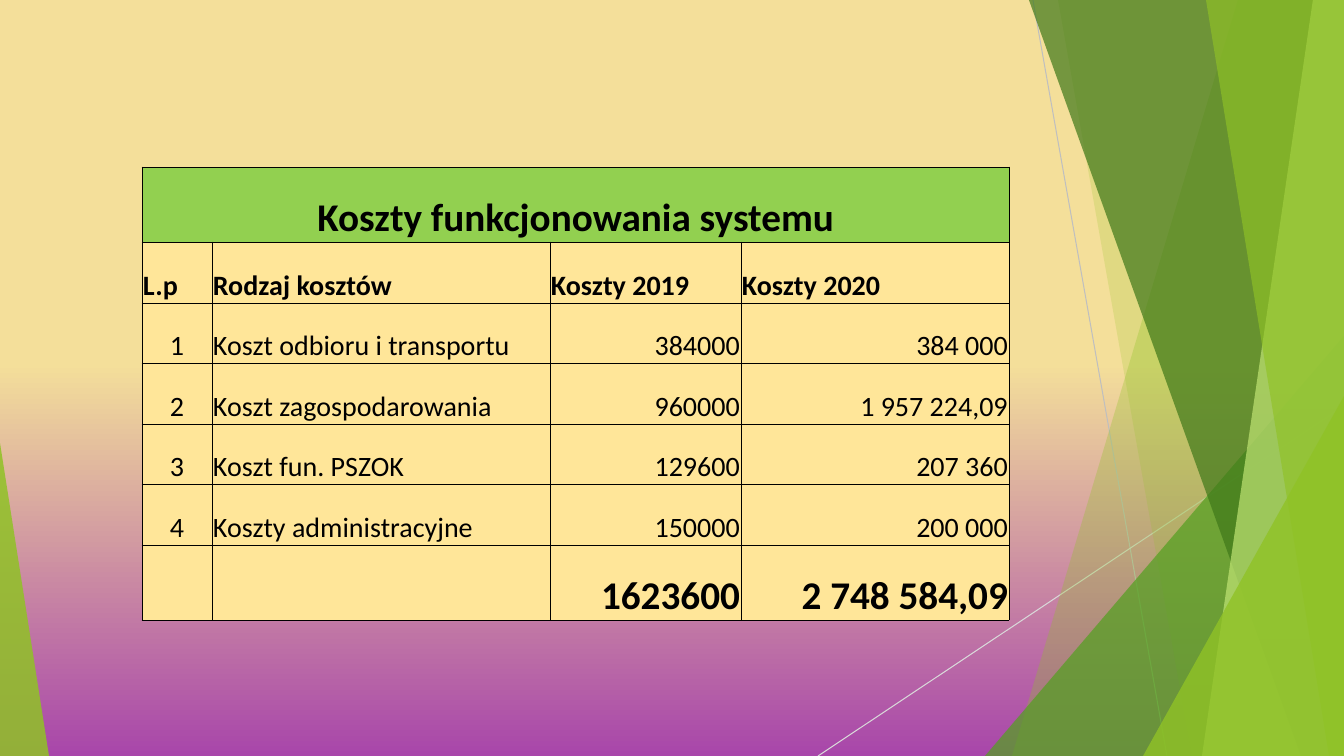
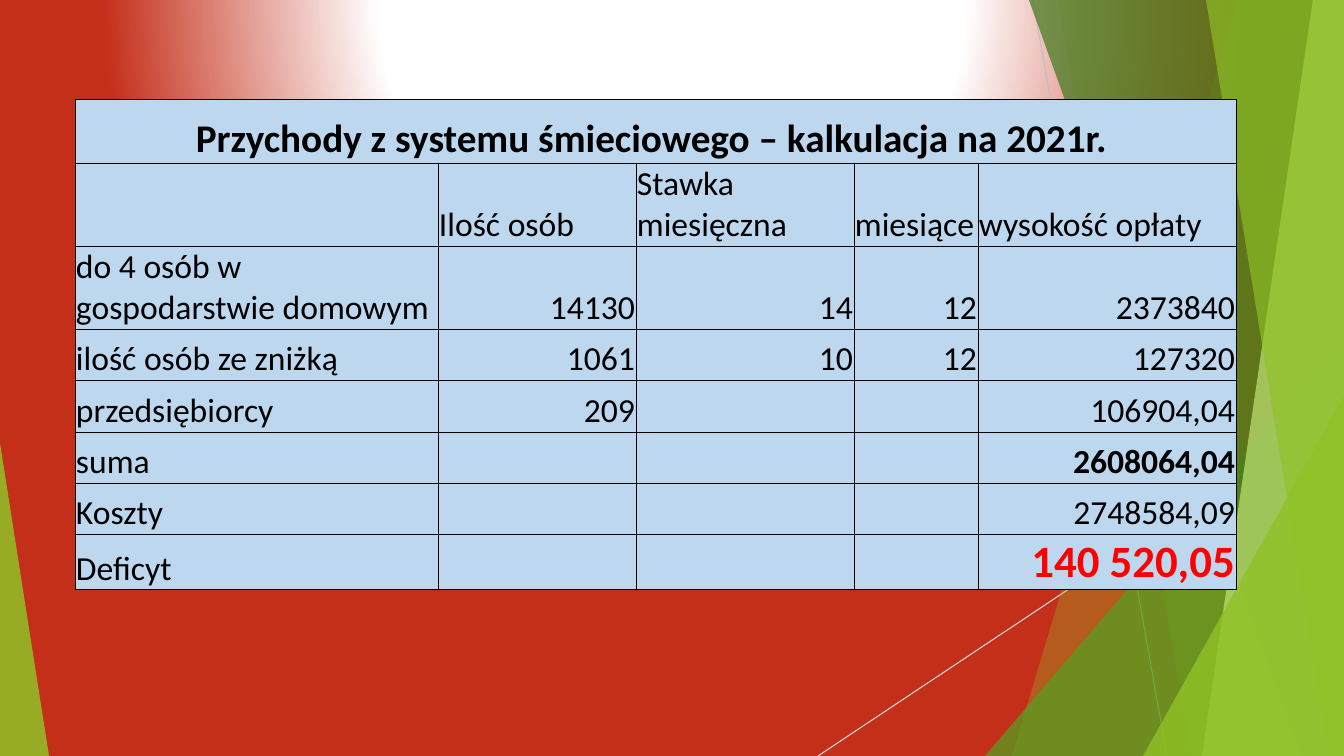
import pptx
import pptx.dml.color
import pptx.enum.shapes
import pptx.enum.text
import pptx.oxml
import pptx.oxml.ns
import pptx.util
from lxml import etree

RGB = pptx.dml.color.RGBColor
Pt = pptx.util.Pt
ALIGN = pptx.enum.text.PP_ALIGN
qn = pptx.oxml.ns.qn
NS = pptx.oxml.ns.nsdecls("a")

EMU_PER_PX = 914400 / 100.8
WIDTH, HEIGHT = 1344, 756
FONT = "Calibri"
ALIGNS = {"l": ALIGN.LEFT, "c": ALIGN.CENTER, "r": ALIGN.RIGHT}

BLACK = RGB(0, 0, 0)
RED = RGB(0xFF, 0, 0)
LIME = RGB(0x90, 0xC2, 0x26)
GREEN = RGB(0x54, 0xA0, 0x21)
DARK_GREEN = RGB(0x3F, 0x78, 0x19)
PALE_LIME = RGB(0xC0, 0xE4, 0x74)
TITLE_GREEN = RGB(0x92, 0xD0, 0x50)
CREAM = RGB(0xFF, 0xE6, 0x99)
SKY = RGB(0xBD, 0xD7, 0xEE)
SAND = RGB(0xF4, 0xDF, 0x9A)
PURPLE = RGB(0xA8, 0x46, 0xAA)
WHITE = RGB(0xFF, 0xFF, 0xFF)
BRICK = RGB(0xC4, 0x2F, 0x1A)
GREY = RGB(0xBF, 0xBF, 0xBF)
LIGHT_GREY = RGB(0xD9, 0xD9, 0xD9)

# x1, y1, x2, y2, colour
RAYS = [(1033, 0, 1167, HEIGHT, GREY), (WIDTH, 406, 818, HEIGHT, LIGHT_GREY)]
# band: left edge at top and at bottom; triangle: left, top, width, apex
FACETS = [
    ("band", (1238, 1012), LIME, 30),
    ("band", (1058, 1192), LIME, 20),
    ("triangle", (985, 336, 359, 1), GREEN, 72),
    ("band", (1029, 1301), DARK_GREEN, 70),
    ("band", (1313, 1202), PALE_LIME, 70),
    ("band", (1206, 1329), LIME, 65),
    ("triangle", (1143, 396, 201, 1), LIME, 80),
    ("triangle", (0, 443, 49, 0), LIME, 85),
]

SLIDES = [
    {
        "stops": [(14, SAND), (48, SAND), (100, PURPLE)],
        "direction": '<a:lin ang="5400000" scaled="0"/>',
        "at": (142, 167),
        "cols": [70, 338, 191, 268],
        "rows": [75, 61, 60, 61, 60, 61, 75],
        "title": "Koszty funkcjonowania systemu",
        "title_fill": TITLE_GREEN,
        "fill": CREAM,
        "size": 20,
        "header_bold": True,
        "aligns": "clrr",
        "emphasis": {(6, 2): (28, BLACK), (6, 3): (28, BLACK)},
        "cells": [
            ["L.p", "Rodzaj kosztów", "Koszty 2019", "Koszty 2020"],
            ["1", "Koszt odbioru i transportu", "384000", "384 000"],
            ["2", "Koszt zagospodarowania", "960000", "1 957 224,09"],
            ["3", "Koszt fun. PSZOK", "129600", "207 360"],
            ["4", "Koszty administracyjne", "150000", "200 000"],
            ["", "", "1623600", "2 748 584,09"],
        ],
    },
    {
        "stops": [(0, WHITE), (38, WHITE), (74, BRICK)],
        "direction": '<a:path path="circle"><a:fillToRect l="50000" '
                     't="-80000" r="50000" b="180000"/></a:path>',
        "at": (75, 99),
        "cols": [363, 198, 218, 124, 258],
        "rows": [64, 83, 83, 51, 52, 51, 51, 52],
        "title": "Przychody z systemu śmieciowego – kalkulacja na 2021r. ",
        "title_fill": SKY,
        "fill": SKY,
        "size": 24,
        "header_bold": False,
        "aligns": "lrrrr",
        "emphasis": {(5, 4): (24, BLACK), (7, 4): (32, RED)},
        "cells": [
            ["", "Ilość osób", "Stawka miesięczna", "miesiące", "wysokość opłaty"],
            ["do 4 osób w gospodarstwie domowym", "14130", "14", "12", "2373840"],
            ["ilość osób ze zniżką", "1061", "10", "12", "127320"],
            ["przedsiębiorcy", "209", "", "", "106904,04"],
            ["suma", "", "", "", "2608064,04"],
            ["Koszty", "", "", "", "2748584,09"],
            ["Deficyt", "", "", "", "140 520,05"],
        ],
    },
]


def px(n):
    return pptx.util.Emu(round(n * EMU_PER_PX))


def add_ray(s, x1, y1, x2, y2, color):
    ray = s.shapes.add_connector(pptx.enum.shapes.MSO_CONNECTOR.STRAIGHT,
                                 px(x1), px(y1), px(x2), px(y2))
    ray.line.color.rgb = color
    ray.line.width = Pt(0.75)
    etree.SubElement(ray.element.spPr, qn("a:effectLst"))
    return ray


def add_facet(s, kind, geometry, color, opacity):
    if kind == "band":
        top_x, bottom_x = geometry
        builder = s.shapes.build_freeform(px(top_x), 0)
        builder.add_line_segments([(px(WIDTH), 0), (px(WIDTH), px(HEIGHT)),
                                   (px(bottom_x), px(HEIGHT))])
        sp = builder.convert_to_shape()
    else:
        left, top, width, apex = geometry
        sp = s.shapes.add_shape(pptx.enum.shapes.MSO_SHAPE.ISOSCELES_TRIANGLE,
                                px(left), px(top), px(width), px(HEIGHT - top))
        sp.adjustments[0] = apex
    sp.shadow.inherit = False
    sp.line.fill.background()
    sp.fill.solid()
    sp.fill.fore_color.rgb = color
    rgb = sp.element.spPr.find(qn("a:solidFill"))[0]
    etree.SubElement(rgb, qn("a:alpha"), val=str(opacity * 1000))
    return sp


def decorate_layout(layout, s):
    """Draw the rays and facets on s, then move them to its layout."""
    drawn = [add_ray(s, *ray) for ray in RAYS]
    drawn += [add_facet(s, *facet) for facet in FACETS]
    for sp in drawn:
        layout.shapes.element.append(sp.element)


def set_background(s, stops, direction):
    gs = "".join(f'<a:gs pos="{pos * 1000}"><a:srgbClr val="{color}"/></a:gs>'
                 for pos, color in stops)
    s.background.fill.solid()
    bg = s.element.find(".//" + qn("p:bgPr"))
    bg.replace(bg[0], pptx.oxml.parse_xml(
        f'<a:gradFill {NS} rotWithShape="1"><a:gsLst>{gs}</a:gsLst>'
        f"{direction}</a:gradFill>"))


def style_cell(cell, fill):
    tc_pr = cell._tc.get_or_add_tcPr()
    for side in "LRTB":
        tc_pr.append(pptx.oxml.parse_xml(
            f'<a:ln{side} {NS} w="6350"><a:solidFill><a:srgbClr val="{BLACK}"/>'
            f"</a:solidFill></a:ln{side}>"))
    cell.fill.solid()
    cell.fill.fore_color.rgb = fill
    cell.margin_left = cell.margin_right = cell.margin_top = px(1)
    cell.margin_bottom = 0
    cell.vertical_anchor = pptx.enum.text.MSO_ANCHOR.BOTTOM


def write(cell, text, size, bold, align, color=BLACK):
    p = cell.text_frame.paragraphs[0]
    p.alignment = ALIGNS[align]
    r = p.add_run()
    r.text = text
    r.font.name = FONT
    r.font.size = Pt(size)
    r.font.bold = bold
    r.font.color.rgb = color


def add_cost_table(s, d):
    cols, rows = d["cols"], d["rows"]
    left, top = d["at"]
    table = s.shapes.add_table(len(rows), len(cols), px(left), px(top),
                               px(sum(cols)), px(sum(rows))).table
    table.first_row = table.horz_banding = False
    for column, width in zip(table.columns, cols):
        column.width = px(width)
    for row, height in zip(table.rows, rows):
        row.height = px(height)
    for i in range(len(rows)):
        for j in range(len(cols)):
            style_cell(table.cell(i, j), d["fill"] if i else d["title_fill"])

    table.cell(0, 0).merge(table.cell(0, len(cols) - 1))
    write(table.cell(0, 0), d["title"], 28, True, "c")
    for i, texts in enumerate(d["cells"], 1):
        for j, text in enumerate(texts):
            if not text:
                continue
            header = i == 1
            strong = (i, j) in d["emphasis"]
            size, color = d["emphasis"].get((i, j), (d["size"], BLACK))
            write(table.cell(i, j), text, size,
                  strong or (header and d["header_bold"]),
                  "l" if header else d["aligns"][j], color)


def main():
    prs = pptx.Presentation()
    prs.slide_width, prs.slide_height = px(WIDTH), px(HEIGHT)
    layout = prs.slide_layouts.get_by_name("Blank")
    for n, d in enumerate(SLIDES):
        s = prs.slides.add_slide(layout)
        if n == 0:
            decorate_layout(layout, s)
        set_background(s, d["stops"], d["direction"])
        add_cost_table(s, d)
    prs.save("out.pptx")


if __name__ == "__main__":
    main()
